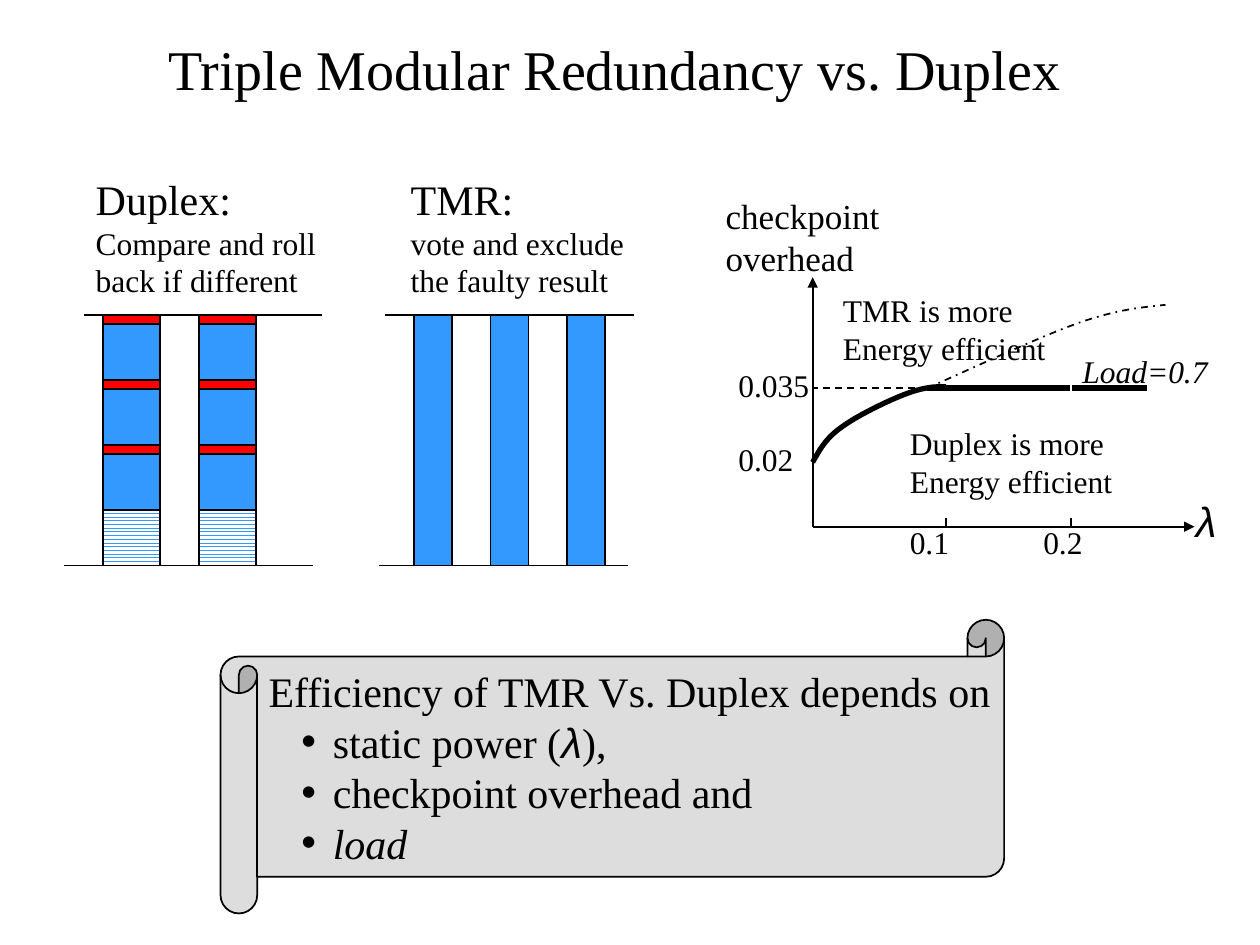
from pptx import Presentation
from pptx.dml.color import RGBColor
from pptx.enum.dml import MSO_LINE, MSO_PATTERN
from pptx.enum.shapes import MSO_CONNECTOR, MSO_SHAPE
from pptx.enum.text import MSO_ANCHOR, MSO_AUTO_SIZE, PP_ALIGN
from pptx.oxml.ns import qn
from pptx.util import Pt
from lxml.etree import SubElement

BLACK = RGBColor(0x00, 0x00, 0x00)
WHITE = RGBColor(0xFF, 0xFF, 0xFF)
BLUE = RGBColor(0x33, 0x99, 0xFF)
RED = RGBColor(0xFF, 0x00, 0x00)
GRAY = RGBColor(0xDD, 0xDD, 0xDD)
SERIF = "Times New Roman"
SANS = "Arial"

TOP, BOTTOM = 180, 323.2
AXIS_X, AXIS_Y = 464.4, 301
LEVEL_Y = 221.8


def set_font(font, size, name=SERIF, italic=False):
    font.size = Pt(size)
    font.name = name
    font.italic = italic
    font.color.rgb = BLACK


def set_frame(tf, wrap):
    tf.word_wrap = wrap
    tf.margin_left = tf.margin_right = Pt(6.5)
    tf.margin_top = tf.margin_bottom = Pt(3.2)


def write_lines(tf, lines, sizes, name=SERIF, italic=False):
    tf.text = "\n".join(lines)
    for p, size in zip(tf.paragraphs, sizes):
        p.alignment = PP_ALIGN.LEFT
        for r in p.runs:
            set_font(r.font, size, name, italic)


def add_label(s, x, y, w, h, lines, sizes, wrap=False, name=SERIF, italic=False):
    tb = s.shapes.add_textbox(Pt(x), Pt(y), Pt(w), Pt(h))
    tf = tb.text_frame
    set_frame(tf, wrap)
    tf.auto_size = MSO_AUTO_SIZE.SHAPE_TO_FIT_TEXT
    write_lines(tf, lines, sizes, name, italic)
    return tb


def add_line(s, x1, y1, x2, y2, width=1, dash=None, arrow=False):
    c = s.shapes.add_connector(MSO_CONNECTOR.STRAIGHT, Pt(x1), Pt(y1), Pt(x2), Pt(y2))
    c.line.color.rgb = BLACK
    c.line.width = Pt(width)
    if dash:
        c.line.dash_style = dash
    if arrow:
        SubElement(c.line._get_or_add_ln(), qn("a:tailEnd"), type="triangle")
    SubElement(c._element.spPr, qn("a:effectLst"))


def add_box(s, x, y, w, h, color, kind=MSO_SHAPE.RECTANGLE, hatched=False):
    sp = s.shapes.add_shape(kind, Pt(x), Pt(y), Pt(w), Pt(h))
    sp.shadow.inherit = False
    if hatched:
        sp.fill.patterned()
        sp.fill.pattern = MSO_PATTERN.ZIG_ZAG
        sp.fill.fore_color.rgb = color
        sp.fill.back_color.rgb = WHITE
    else:
        sp.fill.solid()
        sp.fill.fore_color.rgb = color
    sp.line.color.rgb = BLACK
    sp.line.width = Pt(1)
    return sp


def bezier(a, b, c, d, t):
    u = 1 - t
    return tuple(Pt(u**3 * i + 3 * u * u * t * j + 3 * u * t * t * k + t**3 * m)
                 for i, j, k, m in zip(a, b, c, d))


def add_curve(s, points, width, dash=None, steps=12):
    path = [bezier(*points[i:i + 4], n / steps)
            for i in range(0, len(points) - 1, 3) for n in range(1, steps + 1)]
    x, y = points[0]
    fb = s.shapes.build_freeform(Pt(x), Pt(y))
    fb.add_line_segments(path, close=False)
    sp = fb.convert_to_shape()
    sp.shadow.inherit = False
    sp.fill.background()
    sp.line.color.rgb = BLACK
    sp.line.width = Pt(width)
    if dash:
        sp.line.dash_style = dash


def add_title(s):
    title = s.shapes.title
    title.left, title.top, title.width, title.height = Pt(86.4), Pt(15.8), Pt(530), Pt(46.8)
    tf = title.text_frame
    tf.text = "Triple Modular Redundancy vs. Duplex"
    set_frame(tf, True)
    tf.vertical_anchor = MSO_ANCHOR.MIDDLE
    p = tf.paragraphs[0]
    p.alignment = PP_ALIGN.CENTER
    set_font(p.runs[0].font, 32)


def add_duplex(s):
    check, period = 5.2, 37.1
    work = period - check
    add_line(s, 48.2, TOP, 184.3, TOP)
    for x in (59, 113.8):
        for i in range(3):
            y = TOP + i * period
            add_box(s, x, y + check, 32.5, work, BLUE)
            add_box(s, x, y, 32.5, check, RED)
        y = TOP + 3 * period
        add_box(s, x, y, 32.5, BOTTOM - y, BLUE, hatched=True)
    add_line(s, 36.7, BOTTOM, 178.6, BOTTOM)
    add_label(s, 48.2, 95.8, 140.4, 79.2,
              ["Duplex:", "Compare and roll", "back if different"], [24, 18, 18])


def add_tmr(s):
    add_line(s, 216.7, BOTTOM, 358.6, BOTTOM)
    add_line(s, 220.3, TOP, 362.2, TOP)
    for i in range(3):
        add_box(s, 236.7 + i * 43.6, TOP, 21.8, BOTTOM - TOP, BLUE)
    add_label(s, 228.2, 95.8, 144, 79.2,
              ["TMR:", "vote and exclude", "the faulty result"], [24, 18, 18], wrap=True)


def add_graph(s):
    add_line(s, AXIS_X, AXIS_Y, 682.6, AXIS_Y, arrow=True)
    add_line(s, AXIS_X, AXIS_Y, AXIS_X, 158.4, arrow=True)
    add_line(s, 529.9, LEVEL_Y, 655.2, LEVEL_Y, width=3)
    add_curve(s, [(AXIS_X, 264.2), (468, 257.8), (471.6, 250.6), (481, 244.1),
                  (489.6, 237.6), (509, 228.2), (519.1, 224.6),
                  (529.2, 221), (535, 221), (540.7, 221)], 3)
    add_line(s, 529.9, LEVEL_Y, AXIS_X, LEVEL_Y, dash=MSO_LINE.DASH)
    add_curve(s, [(529.9, LEVEL_Y), (562.3, 207.4), (594.7, 192.2), (617, 184.3),
                  (640.1, 176.4), (653, 175.7), (666, 174.2)], 1, MSO_LINE.DASH_DOT)
    for x, y, line in ((513.4, 239, "Duplex is more"), (475.2, 163.4, "TMR is more")):
        add_label(s, x, y, 130.3, 50.4, [line, "Energy efficient"], [18, 18])
    for x, y, w, value in ((415.4, 248.4, 44.6, "0.02"), (415.4, 205.9, 54, "0.035"),
                           (513.4, 295.9, 36, "0.1"), (589.7, 295.9, 36, "0.2")):
        add_label(s, x, y, w, 28.1, [value], [18])
    load = add_label(s, 612, 198, 86.4, 28.1, ["Load=0.7"], [18], italic=True)
    load.line.color.rgb = WHITE
    load.line.width = Pt(1)
    for x in (540.7, 612):
        add_line(s, x, 295.9, x, AXIS_Y)
    add_label(s, 676.8, 280.1, 27.4, 35.3, ["λ"], [24], wrap=True, name=SANS, italic=True)
    add_label(s, 408.2, 108, 127.4, 54.7, ["checkpoint overhead"], [20], wrap=True)


def add_bullet(p):
    pPr = p._p.get_or_add_pPr()
    pPr.set("marL", str(Pt(36.7)))
    pPr.set("indent", str(Pt(-18)))
    SubElement(pPr, qn("a:buFont"), typeface=SANS)
    SubElement(pPr, qn("a:buChar"), char="•")


def add_conclusion(s):
    sp = add_box(s, 126, 354.2, 447.8, 167.8, GRAY, MSO_SHAPE.HORIZONTAL_SCROLL)
    tf = sp.text_frame
    set_frame(tf, False)
    tf.vertical_anchor = MSO_ANCHOR.MIDDLE
    write_lines(tf, ["Efficiency of TMR Vs. Duplex depends on", "static power (",
                     "checkpoint overhead and", "load"], [24] * 4)
    for p in tf.paragraphs[1:]:
        add_bullet(p)
    for text, name, italic in (("λ", SANS, True), ("),", SERIF, False)):
        r = tf.paragraphs[1].add_run()
        r.text = text
        set_font(r.font, 24, name, italic)
    tf.paragraphs[3].runs[0].font.italic = True


def main():
    prs = Presentation()
    prs.slide_width, prs.slide_height = Pt(720), Pt(540)
    s = prs.slides.add_slide(prs.slide_layouts[5])
    add_title(s)
    add_duplex(s)
    add_tmr(s)
    add_graph(s)
    add_conclusion(s)
    prs.save("out.pptx")


if __name__ == "__main__":
    main()
